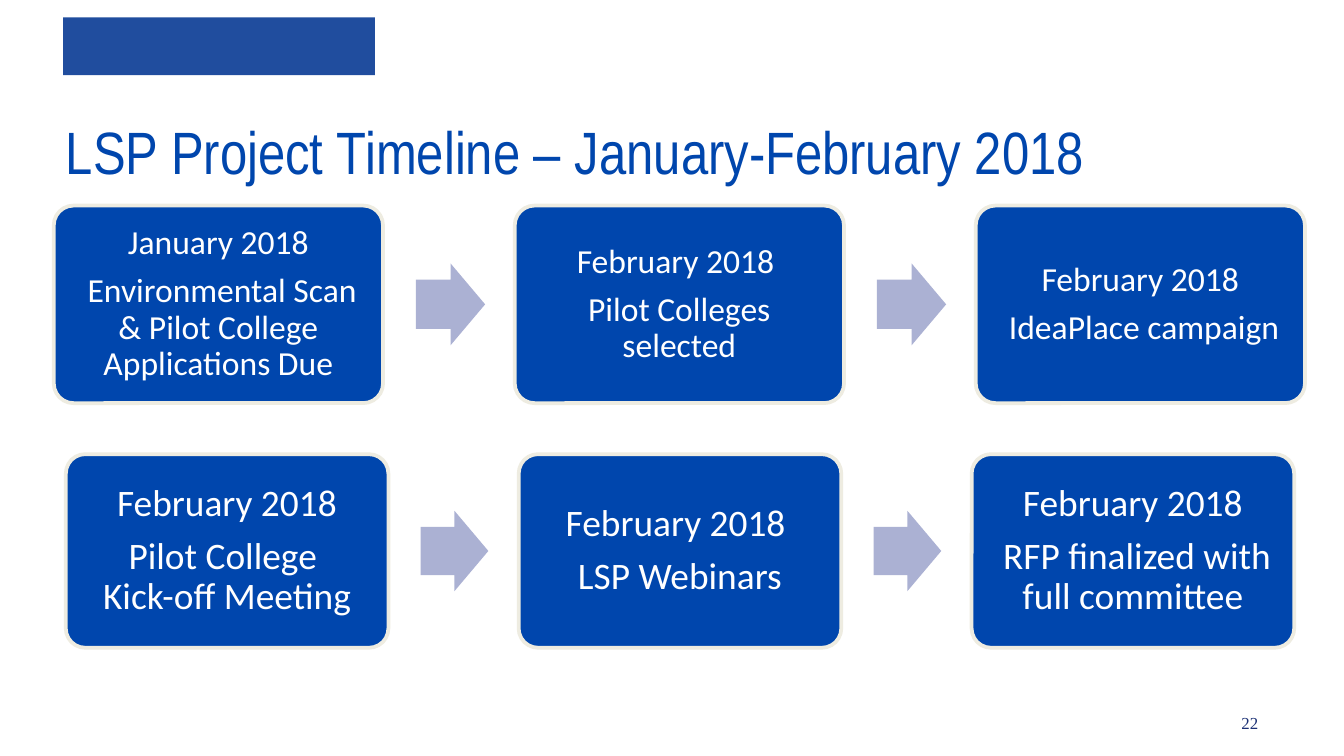
from pptx import Presentation
from pptx.dml.color import RGBColor
from pptx.enum.shapes import MSO_SHAPE as Shape
from pptx.enum.text import MSO_ANCHOR as Anchor, PP_ALIGN as Align
from pptx.util import Inches, Pt

COLORS = {
    "banner": "204D9E", "step": "0046AD", "outline": "EEECE1",
    "arrow": "ABB1D3", "text": "FFFFFF", "number": "1B3075",
}
WIDTH = 10
HEIGHT = WIDTH * 9 / 16
ROWS = [
    (0.4, 1.53, 2.45, 1.47, 3.43, 18, 0.07, [
        ["January 2018", " Environmental Scan & Pilot College Applications Due"],
        ["February 2018 ", "Pilot Colleges selected"],
        ["February 2018", " IdeaPlace campaign"],
    ]),
    (0.49, 3.38, 2.4, 1.44, 3.37, 20, 0.08, [
        ["February 2018", "Pilot College \vKick-off Meeting"],
        ["February 2018 ", "LSP Webinars"],
        ["February 2018", " RFP finalized with full committee"],
    ]),
]


def color(name):
    """Return the named palette colour."""
    return RGBColor.from_string(COLORS[name])


def write(frame, lines, font, size, ink, align=Align.LEFT, anchor=Anchor.TOP,
          spacing=None, after=0, inset=None):
    """Fill a text frame with evenly formatted paragraphs."""
    frame.word_wrap = True
    frame.vertical_anchor = anchor
    if inset is not None:
        frame.margin_left = frame.margin_right = Inches(inset)
        frame.margin_top = frame.margin_bottom = Inches(inset)
    for index, line in enumerate(lines):
        para = frame.add_paragraph() if index else frame.paragraphs[0]
        para.text = line
        para.alignment = align
        para.line_spacing = spacing
        para.space_before, para.space_after = Pt(0), Pt(after)
        para.font.name, para.font.size = font, Pt(size)
        para.font.color.rgb = color(ink)


def add_block(page, kind, left, top, width, height, fill):
    """Add a flat filled shape without an outline."""
    block = page.shapes.add_shape(
        kind, Inches(left), Inches(top), Inches(width), Inches(height))
    block.shadow.inherit = False
    block.fill.solid()
    block.fill.fore_color.rgb = color(fill)
    block.line.fill.background()
    return block


def add_step(page, left, top, width, height, lines, size, inset):
    """Add one rounded timeline step."""
    step = add_block(page, Shape.ROUNDED_RECTANGLE, left, top, width, height, "step")
    step.adjustments[0] = 0.1
    step.line.color.rgb = color("outline")
    step.line.width = Pt(2)
    write(step.text_frame, lines, "Calibri", size, "text", align=Align.CENTER,
          anchor=Anchor.MIDDLE, spacing=0.9, after=0.35 * size, inset=inset)


def add_timeline_row(page, left, top, width, height, pitch, size, inset, steps):
    """Add a row of evenly pitched steps with block arrows between them."""
    arrow_width, arrow_height = 0.21 * width, 0.415 * height
    for column, lines in enumerate(steps):
        step_left = left + column * pitch
        add_step(page, step_left, top, width, height, lines, size, inset)
        if column < len(steps) - 1:
            arrow = add_block(page, Shape.RIGHT_ARROW, step_left + 1.1 * width,
                              top + (height - arrow_height) / 2,
                              arrow_width, arrow_height, "arrow")
            arrow.adjustments[0], arrow.adjustments[1] = 0.6, 0.5


def add_title(page, left, top, width, height):
    """Place and format the title placeholder."""
    title = page.shapes.title
    title.left, title.top = Inches(left), Inches(top)
    title.width, title.height = Inches(width), Inches(height)
    write(title.text_frame, ["LSP Project Timeline – January-February 2018"],
          "Arial Narrow", 32, "step", anchor=Anchor.MIDDLE)


def add_page_number(page, left, top, width, height):
    """Add the page number at the lower right."""
    box = page.shapes.add_textbox(
        Inches(left), Inches(top), Inches(width), Inches(height))
    write(box.text_frame, ["22"], "Times New Roman", 9, "number", align=Align.RIGHT)


def main():
    """Build and save the timeline slide."""
    deck = Presentation()
    deck.slide_width, deck.slide_height = Inches(WIDTH), Inches(HEIGHT)
    page = deck.slides.add_slide(deck.slide_layouts[5])
    add_block(page, Shape.RECTANGLE, 0.47, 0.13, 2.32, 0.43, "banner")
    add_title(page, 0.39, 0.8, 9.25, 0.64)
    for row in ROWS:
        add_timeline_row(page, *row)
    add_page_number(page, 7.97, 5.25, 1.49, 0.25)
    deck.save("out.pptx")


if __name__ == "__main__":
    main()
